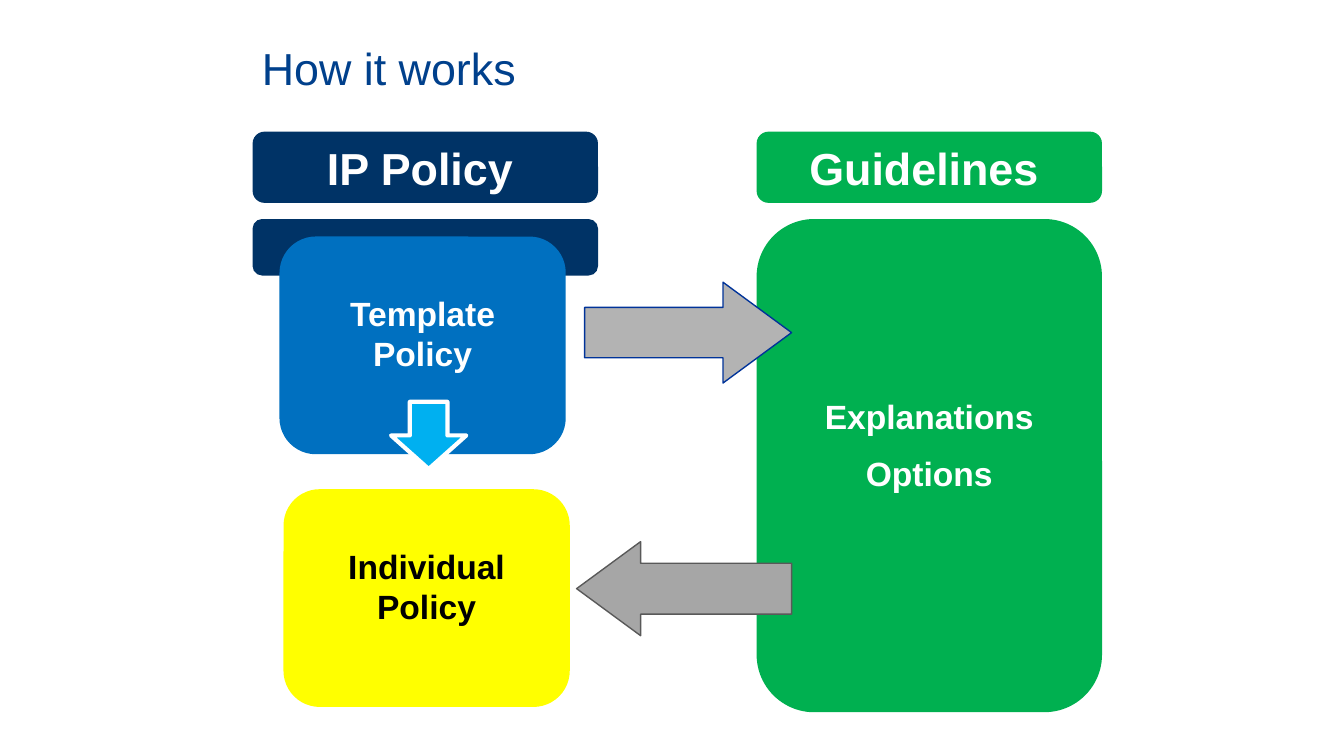
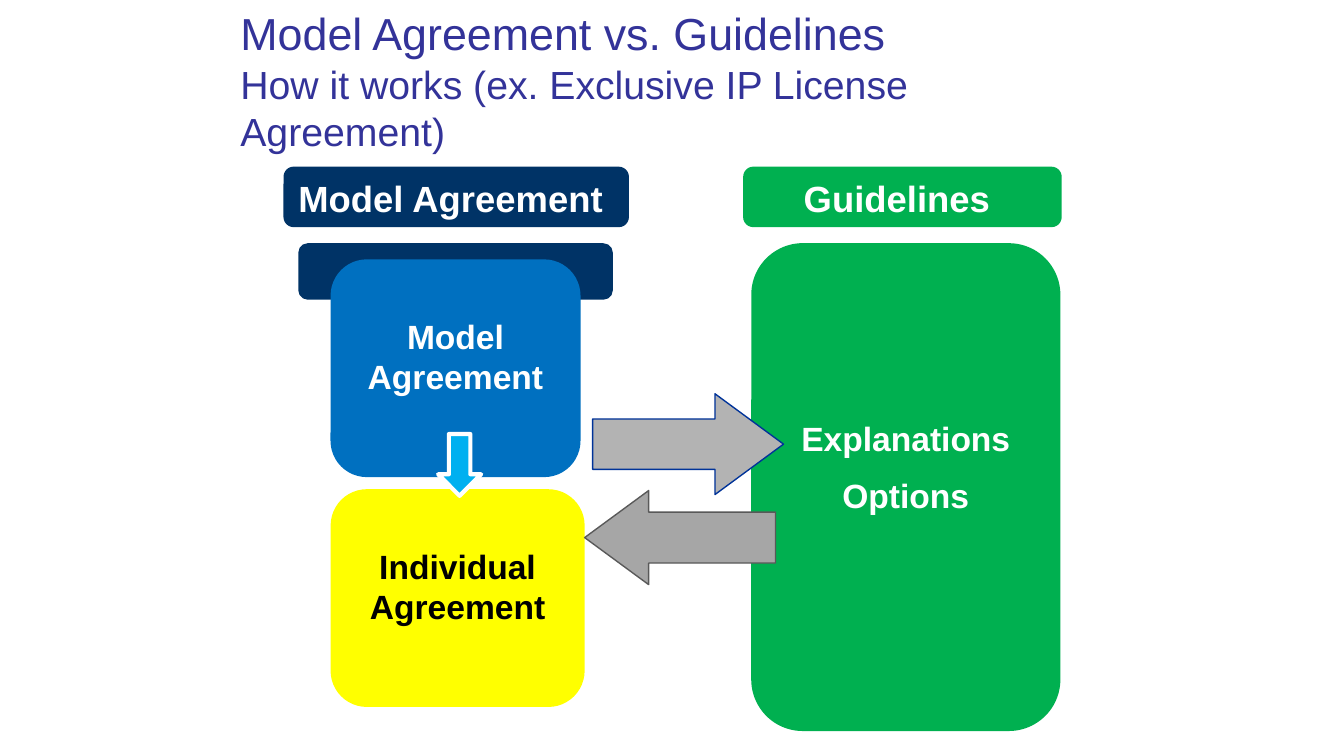
from dataclasses import dataclass

from pptx import Presentation
from pptx.dml.color import RGBColor
from pptx.enum.shapes import MSO_SHAPE as Shape
from pptx.enum.text import MSO_ANCHOR as Anchor, PP_ALIGN as Align
from pptx.util import Inches, Pt


@dataclass(frozen=True)
class Theme:
    font: str = "Arial"
    navy: str = "003366"
    blue: str = "0070C0"
    sky: str = "00B0F0"
    yellow: str = "FFFF00"
    green: str = "00B050"
    white: str = "FFFFFF"
    black: str = "000000"
    there: str = "B3B3B3"
    there_line: str = "003399"
    back: str = "A6A6A6"
    back_line: str = "595959"
    title_size: float = 24
    subtitle_size: float = 21
    body_size: float = 18


theme = Theme()


def add_block(slide, kind, box, fill, line=None, line_width=0.75):
    block = slide.shapes.add_shape(kind, *map(Inches, box))
    block.shadow.inherit = False
    block.fill.solid()
    block.fill.fore_color.rgb = RGBColor.from_string(fill)
    if line:
        block.line.color.rgb = RGBColor.from_string(line)
        block.line.width = Pt(line_width)
    else:
        block.line.fill.background()
    return block


def write(holder, lines, color, insets, anchor, align=Align.CENTER, bold=True,
          gap=0, same_paragraph=False):
    """Write (text, size) lines as paragraphs, or as one paragraph with breaks."""
    frame = holder.text_frame
    frame.word_wrap = True
    frame.vertical_anchor = anchor
    (frame.margin_left, frame.margin_top,
     frame.margin_right, frame.margin_bottom) = map(Inches, insets)
    paragraph = frame.paragraphs[0]
    paragraph.alignment = align
    for index, (text, size) in enumerate(lines):
        if index and same_paragraph:
            paragraph.add_line_break()
        elif index:
            paragraph = frame.add_paragraph()
            paragraph.alignment = align
            paragraph.space_before = Pt(gap)
        run = paragraph.add_run()
        run.text = text
        run.font.name = theme.font
        run.font.size = Pt(size)
        run.font.bold = bold
        run.font.color.rgb = RGBColor.from_string(color)


diagrams = [
    dict(
        title=[("How it works", theme.title_size)],
        title_color="00408C", title_box=(1.85, 0.03, 6.75, 0.94),
        header_size=24,
        source="IP Policy", source_box=(1.88, 0.98, 2.57, 0.53),
        band_box=(1.88, 1.63, 2.57, 0.42),
        template="Template Policy", template_box=(2.08, 1.76, 2.13, 1.62),
        individual="Individual Policy", individual_box=(2.11, 3.64, 2.13, 1.62),
        down_box=(2.91, 2.99, 0.56, 0.5),
        guide_box=(5.63, 1.63, 2.57, 3.67),
        guide_header_box=(5.63, 0.98, 2.57, 0.53),
        there_box=(4.35, 2.1, 1.54, 0.75), back_box=(4.29, 4.03, 1.6, 0.7),
    ),
    dict(
        title=[("Model Agreement vs. Guidelines", theme.title_size),
               ("How it works (ex. Exclusive IP License Agreement)",
                theme.subtitle_size)],
        title_color="333399", title_box=(1.69, 0.15, 6.75, 0.89),
        header_size=19.5,
        source="Model Agreement", source_box=(2.11, 1.24, 2.57, 0.45),
        band_box=(2.22, 1.81, 2.34, 0.42),
        template="Model Agreement", template_box=(2.46, 1.93, 1.86, 1.62),
        individual="Individual Agreement", individual_box=(2.46, 3.64, 1.89, 1.62),
        down_box=(3.26, 3.23, 0.32, 0.46),
        guide_box=(5.59, 1.81, 2.3, 3.63),
        guide_header_box=(5.53, 1.24, 2.37, 0.45),
        there_box=(4.41, 2.93, 1.42, 0.75), back_box=(4.35, 3.65, 1.42, 0.7),
    ),
]

deck = Presentation()
deck.slide_width = Inches(10)
deck.slide_height = deck.slide_width * 9 // 16

for diagram in diagrams:
    slide = deck.slides.add_slide(deck.slide_layouts[6])

    title = slide.shapes.add_textbox(*map(Inches, diagram["title_box"]))
    write(title, diagram["title"], diagram["title_color"], (0.1, 0.05, 0.2, 0.05),
          Anchor.MIDDLE, Align.LEFT, bold=False, same_paragraph=True)

    add_block(slide, Shape.ROUNDED_RECTANGLE, diagram["band_box"], theme.navy)

    for header, box, fill in [
        (diagram["source"], diagram["source_box"], theme.navy),
        ("Guidelines", diagram["guide_header_box"], theme.green),
    ]:
        heading = add_block(slide, Shape.ROUNDED_RECTANGLE, box, fill)
        write(heading, [(header, diagram["header_size"])], theme.white,
              (0.07, 0.01, 0.15, 0), Anchor.MIDDLE)

    for lines, box, fill, color, top in [
        ([diagram["template"]], diagram["template_box"],
         theme.blue, theme.white, 0.34),
        ([diagram["individual"]], diagram["individual_box"],
         theme.yellow, theme.black, 0.34),
        (["Explanations", "Options"], diagram["guide_box"],
         theme.green, theme.white, 1.19),
    ]:
        panel = add_block(slide, Shape.ROUNDED_RECTANGLE, box, fill)
        write(panel, [(line, theme.body_size) for line in lines], color,
              (0.07, top, 0.07, 0.04), Anchor.TOP, gap=9)

    add_block(slide, Shape.DOWN_ARROW, diagram["down_box"], theme.sky,
              theme.white, 2.25)

    for box, fill, line, shaft, turn in [
        (diagram["there_box"], theme.there, theme.there_line, 0.5, 0),
        (diagram["back_box"], theme.back, theme.back_line, 0.54, 180),
    ]:
        arrow = add_block(slide, Shape.RIGHT_ARROW, box, fill, line)
        arrow.adjustments[0] = shaft
        arrow.adjustments[1] = 0.68
        arrow.rotation = turn

deck.save("out.pptx")
